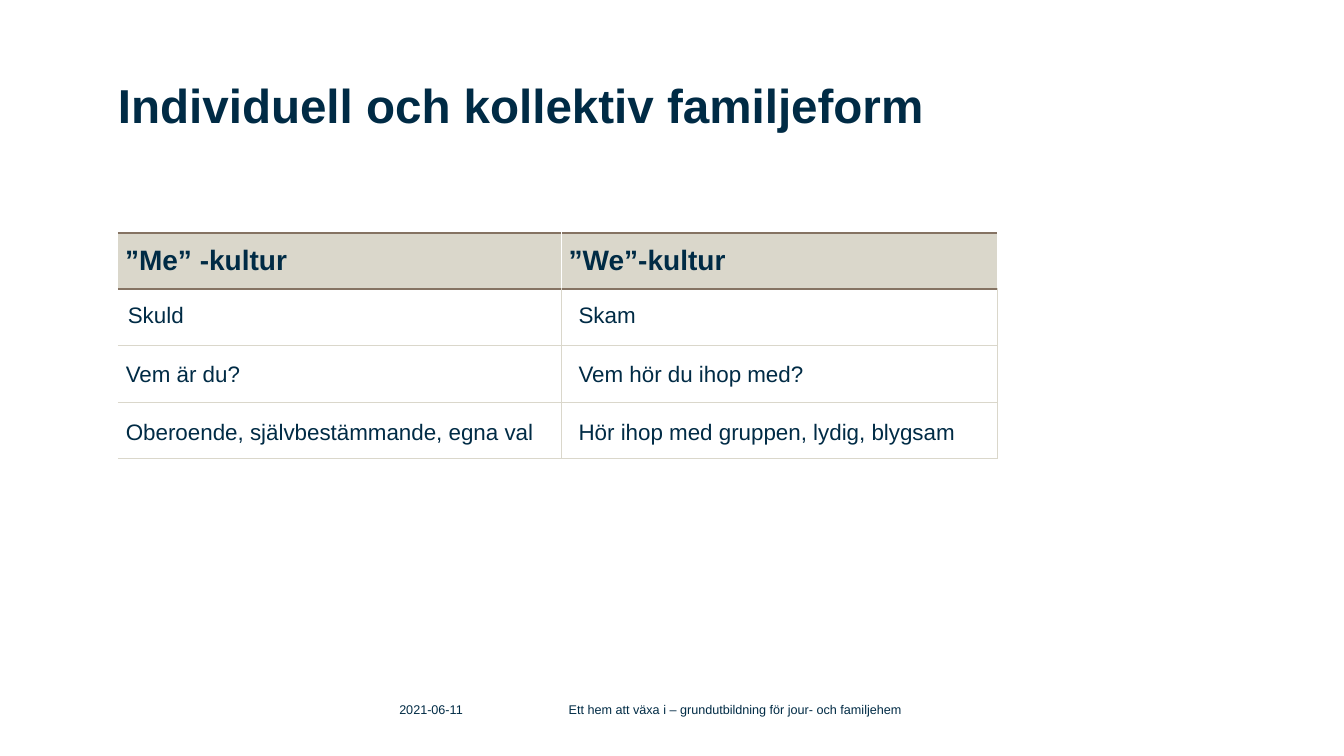
import lxml.etree
import pptx
import pptx.dml.color
import pptx.enum.text
import pptx.oxml.ns
import pptx.util

Inches = pptx.util.Inches
COLORS = {"navy": "002B45", "sand": "DAD7CB", "brown": "857363", "white": "FFFFFF"}


def write(frame, text, size, bold=False):
    para = frame.paragraphs[0]
    para.text = text
    para.font.name = "Arial"
    para.font.size = pptx.util.Pt(size)
    para.font.bold = bold
    para.font.color.rgb = pptx.dml.color.RGBColor.from_string(COLORS["navy"])
    return para


def set_borders(cell, borders):
    properties = cell._tc.get_or_add_tcPr()
    for index, side in enumerate("LRTB"):
        line = lxml.etree.Element(pptx.oxml.ns.qn(f"a:ln{side}"))
        if side in borders:
            color, width = borders[side]
            line.set("w", str(pptx.util.Pt(width)))
            fill = lxml.etree.SubElement(line, pptx.oxml.ns.qn("a:solidFill"))
            lxml.etree.SubElement(fill, pptx.oxml.ns.qn("a:srgbClr"), val=COLORS[color])
        else:
            lxml.etree.SubElement(line, pptx.oxml.ns.qn("a:noFill"))
        properties.insert(index, line)


deck = pptx.Presentation()
deck.slide_width = Inches(13.33)
deck.slide_height = Inches(7.5)
page = deck.slides.add_slide(deck.slide_layouts[6])

# Title, date and footer
TOP = pptx.enum.text.MSO_ANCHOR.TOP
MIDDLE = pptx.enum.text.MSO_ANCHOR.MIDDLE
for text, left, top, width, height, size, bold, anchor in [
    ("Individuell och kollektiv familjeform", 1.17, 0.75, 10.15, 1.42, 34, True, TOP),
    ("2021-06-11", 3.96, 6.89, 1.68, 0.29, 9, False, MIDDLE),
    ("Ett hem att växa i – grundutbildning för jour- och familjehem",
     5.64, 6.89, 4.22, 0.29, 9, False, MIDDLE),
]:
    box = page.shapes.add_textbox(Inches(left), Inches(top), Inches(width), Inches(height))
    frame = box.text_frame
    frame.word_wrap = True
    frame.vertical_anchor = anchor
    frame.margin_left = frame.margin_right = frame.margin_top = frame.margin_bottom = 0
    write(frame, text, size, bold)

# Table with a header row and ruled rows
headings = ["”Me” -kultur", "”We”-kultur"]
table = page.shapes.add_table(
    4, 2, Inches(1.17), Inches(2.31), Inches(8.72), Inches(2.25)).table
table.first_row = table.horz_banding = False
for column, width in zip(table.columns, [4.4, 4.32]):
    column.width = Inches(width)
for row_index, row in enumerate(table.rows):
    row.height = Inches(0.56)
    for column_index, cell in enumerate(row.cells):
        if row_index == 0:
            cell.fill.solid()
            cell.fill.fore_color.rgb = pptx.dml.color.RGBColor.from_string(COLORS["sand"])
            cell.vertical_anchor = MIDDLE
            cell.margin_left = cell.margin_right = Inches(0.07)
            cell.margin_top = cell.margin_bottom = 0
            para = write(cell.text_frame, headings[column_index], 20, True)
            borders = {"R": ("white", 1), "T": ("brown", 1.5), "B": ("brown", 1.5)}
        else:
            cell.fill.background()
            top_color = "brown" if row_index == 1 else "sand"
            borders = {"R": ("sand", 1), "T": (top_color, 1), "B": ("sand", 1)}
        if column_index > 0:
            borders["L"] = borders["R"]
        set_borders(cell, borders)

# Contrasts laid over the table rows
contrasts = [
    (1.17, 0.9, "Skuld", 0.9, "Skam"),
    (1.15, 1.44, "Vem är du?", 2.49, "Vem hör du ihop med?"),
    (1.15, 4.38, "Oberoende, självbestämmande, egna val",
     4.09, "Hör ihop med gruppen, lydig, blygsam"),
]
for index, (me_left, me_width, me_text, we_width, we_text) in enumerate(contrasts):
    top = 2.94 + 0.58 * index
    for left, width, text in [(me_left, me_width, me_text), (5.64, we_width, we_text)]:
        box = page.shapes.add_textbox(Inches(left), Inches(top), Inches(width), Inches(0.37))
        box.text_frame.auto_size = pptx.enum.text.MSO_AUTO_SIZE.SHAPE_TO_FIT_TEXT
        box.text_frame.word_wrap = False
        write(box.text_frame, text, 16)

deck.save("out.pptx")
